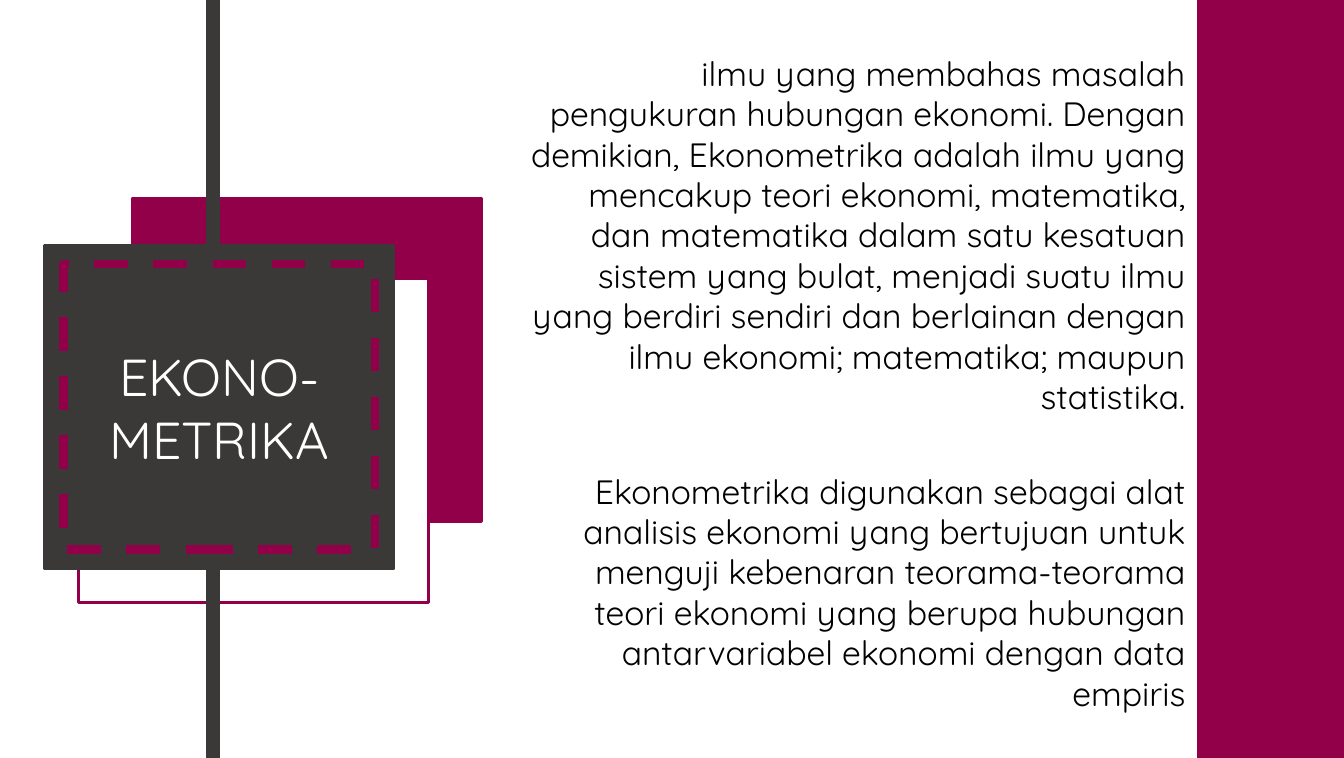
from pptx import Presentation
from pptx import util as u
from pptx.dml.color import RGBColor
from pptx.enum import dml, shapes, text
from pptx.oxml.ns import qn
from lxml import etree

WINE, DARK, WHITE, BLACK = "920049", "3B3838", "FFFFFF", "000000"
TALL = 7.5
CARD = (3.46, 3.2)


def tint(code):
    return RGBColor.from_string(code)


def apply(item, form):
    for name, value in form.items():
        setattr(item, name, value)


class Deck:
    """Holds the text style and the current slide."""

    def __init__(self, slide, face):
        self.slide, self.face = slide, face

    def place(self, item, x, y, w, h):
        sides = zip(("left", "top", "width", "height"), (x, y, w, h))
        apply(item, {side: u.Inches(size) for side, size in sides})

    def paint(self, item, fill, line, width):
        if fill:
            item.fill.solid()
            item.fill.fore_color.rgb = tint(fill)
        else:
            item.fill.background()
        item.line.color.rgb = tint(line)
        item.line.width = u.Pt(width)

    def box(self, x, y, w, h, fill=None, line=WINE, width=2):
        item = self.slide.shapes.add_shape(
            shapes.MSO_SHAPE.RECTANGLE, *map(u.Inches, (x, y, w, h)))
        item.shadow.inherit = False
        self.paint(item, fill, line, width)
        return item

    def bar(self, x, top, end):
        """Draw a thick vertical line."""
        item = self.slide.shapes.add_connector(
            shapes.MSO_CONNECTOR.STRAIGHT, *map(u.Inches, (x, top, x, end)))
        item.line.color.rgb = tint(DARK)
        item.line.width = u.Pt(10)
        etree.SubElement(item._element.spPr, qn("a:effectLst"))

    def label(self, item, paras, size, color, align, anchor, gap=0):
        """Fill a placeholder; gap is the space between paragraphs."""
        frame = item.text_frame
        frame.text = "\n".join(paras)
        apply(frame, {
            "word_wrap": True, "auto_size": text.MSO_AUTO_SIZE.NONE,
            "vertical_anchor": anchor,
            "margin_left": u.Inches(0.13), "margin_right": u.Inches(0.13),
            "margin_top": u.Inches(0.07), "margin_bottom": u.Inches(0.07)})
        for i, para in enumerate(frame.paragraphs):
            apply(para, {"alignment": align, "line_spacing": 1.0,
                         "space_before": u.Pt(gap if i else 0)})
            for run in para.runs:
                apply(run.font, {"name": self.face, "size": u.Pt(size)})
                run.font.color.rgb = tint(color)


def main():
    show = Presentation()
    apply(show, {"slide_width": u.Inches(13.3),
                 "slide_height": u.Inches(TALL)})
    slide = show.slides.add_slide(show.slide_layouts[0])
    deck = Deck(slide, "Quicksand")
    title, body = slide.placeholders

    deck.place(body, 5.1, 0.45, 6.76, 6.22)
    deck.label(body, [
        "ilmu yang membahas masalah pengukuran hubungan ekonomi. Dengan "
        "demikian, Ekonometrika adalah ilmu yang mencakup teori ekonomi, "
        "matematika, dan matematika dalam satu kesatuan sistem yang bulat, "
        "menjadi suatu ilmu yang berdiri sendiri dan berlainan dengan ilmu "
        "ekonomi; matematika; maupun statistika.",
        "Ekonometrika digunakan sebagai alat analisis ekonomi yang bertujuan "
        "untuk menguji kebenaran teorama-teorama teori ekonomi yang berupa "
        "hubungan antarvariabel ekonomi dengan data empiris",
    ], 24, BLACK, text.PP_ALIGN.RIGHT, text.MSO_ANCHOR.TOP, gap=38.4)

    deck.box(1.31, 1.96, *CARD, fill=WINE)
    deck.box(0.78, 2.76, *CARD, fill=WHITE)
    deck.bar(2.11, 5.62, TALL)
    deck.bar(2.11, 0, 3.22)

    # The title card lies over the bars
    deck.place(title, 0.44, 2.43, *CARD)
    deck.paint(title, DARK, DARK, 2)
    deck.label(title, ["EKONO-METRIKA"], 37, WHITE,
               text.PP_ALIGN.CENTER, text.MSO_ANCHOR.MIDDLE)
    title._element.getparent().append(title._element)

    seam = deck.box(0.63, 2.61, 3.08, 2.83, width=6)
    seam.line.dash_style = dml.MSO_LINE.DASH
    deck.box(11.86, 0, 1.44, TALL, fill=WINE)
    show.save("out.pptx")


if __name__ == "__main__":
    main()
